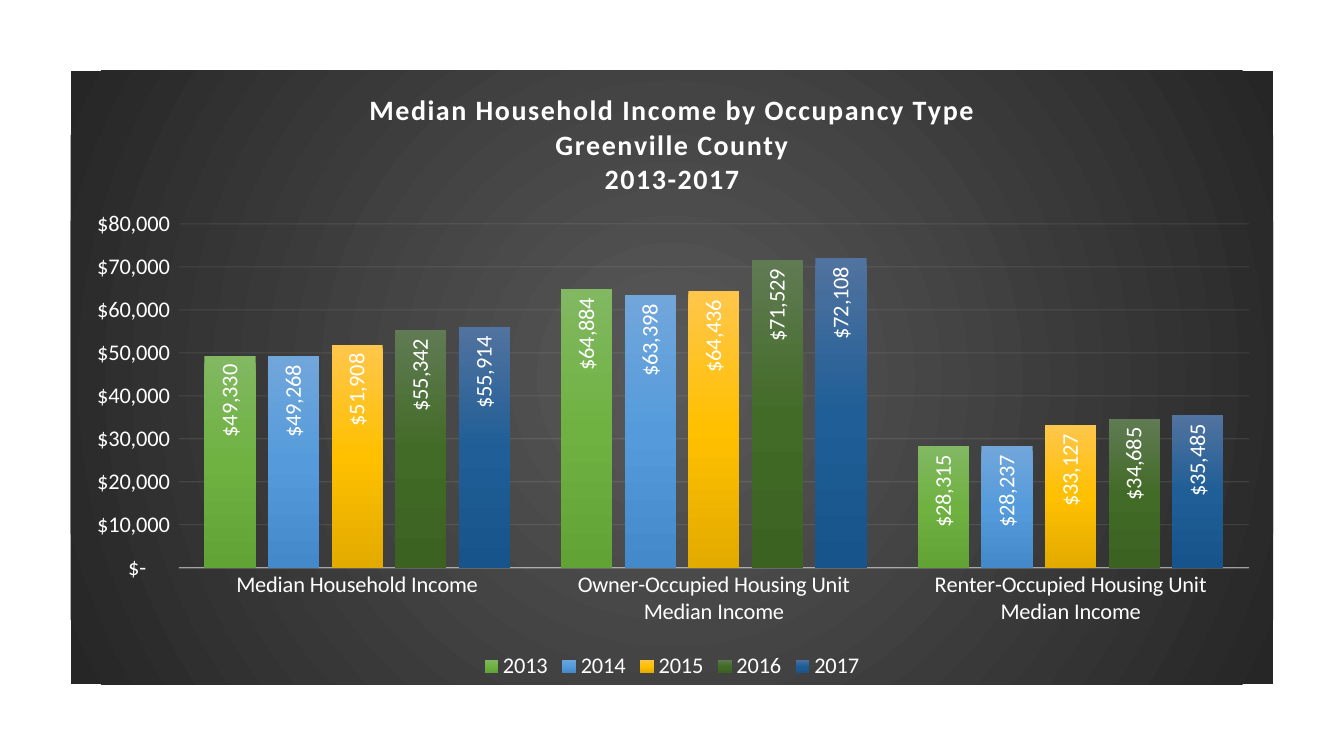
"""Build the slide charting median household income in Greenville County."""
from dataclasses import dataclass
from typing import Any

from lxml import etree
from pptx import Presentation
from pptx import util as u
from pptx.chart import data as chart_data
from pptx.dml.color import RGBColor
from pptx.enum import chart as ce
from pptx.oxml import parse_xml
from pptx.oxml.ns import nsdecls, qn

WHITE = RGBColor(0xFF, 0xFF, 0xFF)
RULE = RGBColor(0xF2, 0xF2, 0xF2)
BACKDROP = (RGBColor(0x59, 0x59, 0x59), RGBColor(0x26, 0x26, 0x26))
DOLLARS = r'_("$"* #,##0_);_("$"* \(#,##0\);_("$"* "-"??_);_(@_)'
BODY_FONT = {"name": "Calibri", "size": u.Pt(16), "bold": False}
TITLE_FONT = {"name": "Calibri", "size": u.Pt(20), "bold": True}
LINEAR = '<a:lin ang="5400000" scaled="0"/>'
RADIAL = ('<a:path path="circle"><a:fillToRect l="50000" t="50000" '
          'r="50000" b="50000"/></a:path>')
PLOT_FRAME = {"x": 0.09, "y": 0.25, "w": 0.89, "h": 0.56}
HEADING = ("Median Household Income by Occupancy Type",
           "Greenville County", "2013-2017")
HOUSEHOLDS = ("Median Household Income",
              "Owner-Occupied Housing Unit Median Income",
              "Renter-Occupied Housing Unit Median Income")


@dataclass(frozen=True)
class Year:
    name: str
    incomes: tuple[int, int, int]
    shades: tuple[RGBColor, RGBColor, RGBColor]


YEARS = (
    Year("2013", (49330, 64884, 28315),
         (RGBColor(0x81, 0xB8, 0x61), RGBColor(0x6F, 0xB2, 0x42), RGBColor(0x62, 0xA3, 0x36))),
    Year("2014", (49268, 63398, 28237),
         (RGBColor(0x71, 0xA6, 0xDB), RGBColor(0x55, 0x9B, 0xDB), RGBColor(0x44, 0x8A, 0xCA))),
    Year("2015", (51908, 64436, 33127),
         (RGBColor(0xFF, 0xC6, 0x4B), RGBColor(0xFF, 0xC0, 0x00), RGBColor(0xE3, 0xAB, 0x00))),
    Year("2016", (55342, 71529, 34685),
         (RGBColor(0x60, 0x7B, 0x53), RGBColor(0x43, 0x6B, 0x28), RGBColor(0x3B, 0x62, 0x20))),
    Year("2017", (55914, 72108, 35485),
         (RGBColor(0x51, 0x73, 0x9F), RGBColor(0x20, 0x5E, 0x97), RGBColor(0x17, 0x54, 0x8B))),
)


def apply(target: Any, values: dict[str, Any]) -> None:
    for key, value in values.items():
        setattr(target, key, value)


def style_font(font: Any, values: dict[str, Any]) -> None:
    apply(font, values)
    font.color.rgb = WHITE


def gradient(shades: tuple[RGBColor, ...], direction: str) -> Any:
    step = 100000 // (len(shades) - 1)
    stops = "".join(f'<a:gs pos="{i * step}"><a:srgbClr val="{shade}"/></a:gs>'
                    for i, shade in enumerate(shades))
    return parse_xml(f'<a:gradFill {nsdecls("a")} rotWithShape="1">'
                     f'<a:gsLst>{stops}</a:gsLst>{direction}</a:gradFill>')


def style_line(line: Any, width: float, opacity: int) -> None:
    line.width = u.Pt(width)
    line.color.rgb = RULE
    tint = next(line._ln.iter(qn("a:srgbClr")))
    etree.SubElement(tint, qn("a:alpha")).set("val", str(opacity * 1000))


def style_backdrop(chart: Any) -> None:
    backdrop = parse_xml(f'<c:spPr {nsdecls("c", "a")}><a:ln><a:noFill/></a:ln></c:spPr>')
    backdrop.insert(0, gradient(BACKDROP, RADIAL))
    chart._chartSpace.find(qn("c:chart")).addnext(backdrop)


def place_plot(chart: Any) -> None:
    plot_area = next(chart._chartSpace.iter(qn("c:plotArea")))
    for old in plot_area.findall(qn("c:layout")):
        plot_area.remove(old)
    sizes = "".join(f'<c:{key} val="{value}"/>' for key, value in PLOT_FRAME.items())
    plot_area.insert(0, parse_xml(
        f'<c:layout {nsdecls("c")}><c:manualLayout><c:layoutTarget val="inner"/>'
        f'<c:xMode val="edge"/><c:yMode val="edge"/>{sizes}</c:manualLayout></c:layout>'))


def write_heading(chart: Any) -> None:
    chart.has_title = True
    frame = chart.chart_title.text_frame
    for i, line in enumerate(HEADING):
        paragraph = frame.add_paragraph() if i else frame.paragraphs[0]
        run = paragraph.add_run()
        run.text = line
        style_font(run.font, TITLE_FONT)
        run.font._element.set("spc", "100")


def style_axes(chart: Any) -> None:
    households, income = chart.category_axis, chart.value_axis
    for axis in (households, income):
        axis.major_tick_mark = axis.minor_tick_mark = ce.XL_TICK_MARK.NONE
        style_font(axis.tick_labels.font, BODY_FONT)
    style_line(households.format.line, 1, 54)
    apply(income, {"minimum_scale": 0, "maximum_scale": 80000, "major_unit": 10000,
                   "has_major_gridlines": True})
    apply(income.tick_labels, {"number_format": DOLLARS, "number_format_is_linked": False})
    income.format.line.fill.background()
    style_line(income.major_gridlines.format.line, 0.75, 10)


def style_year(columns: Any, year: Year) -> None:
    columns.invert_if_negative = False
    columns._element.get_or_add_spPr().append(gradient(year.shades, LINEAR))
    labels = columns.data_labels
    apply(labels, {"show_value": True, "number_format": DOLLARS,
                   "number_format_is_linked": False,
                   "position": ce.XL_LABEL_POSITION.INSIDE_END})
    style_font(labels.font, BODY_FONT)
    turn = next(labels._element.iter(qn("a:bodyPr")))
    turn.set("rot", "-5400000")
    turn.set("vert", "horz")


def add_income_chart(slide: Any) -> None:
    table = chart_data.CategoryChartData(number_format=DOLLARS)
    table.categories = HOUSEHOLDS
    for year in YEARS:
        table.add_series(year.name, year.incomes)
    chart = slide.shapes.add_chart(ce.XL_CHART_TYPE.COLUMN_CLUSTERED, u.Pt(50.4), u.Pt(50.4),
                                   u.Pt(859), u.Pt(438.5), table).chart
    style_font(chart.font, BODY_FONT)
    style_backdrop(chart)
    place_plot(chart)
    write_heading(chart)
    style_axes(chart)
    apply(chart.plots[0], {"gap_width": 100, "overlap": -24, "vary_by_categories": False})
    for columns, year in zip(chart.plots[0].series, YEARS):
        style_year(columns, year)
    chart.has_legend = True
    apply(chart.legend, {"position": ce.XL_LEGEND_POSITION.BOTTOM, "include_in_layout": False})
    style_font(chart.legend.font, BODY_FONT)


def main() -> None:
    deck = Presentation()
    apply(deck, {"slide_width": u.Pt(960), "slide_height": u.Pt(540)})
    add_income_chart(deck.slides.add_slide(deck.slide_layouts[6]))
    deck.save("out.pptx")


if __name__ == "__main__":
    main()
